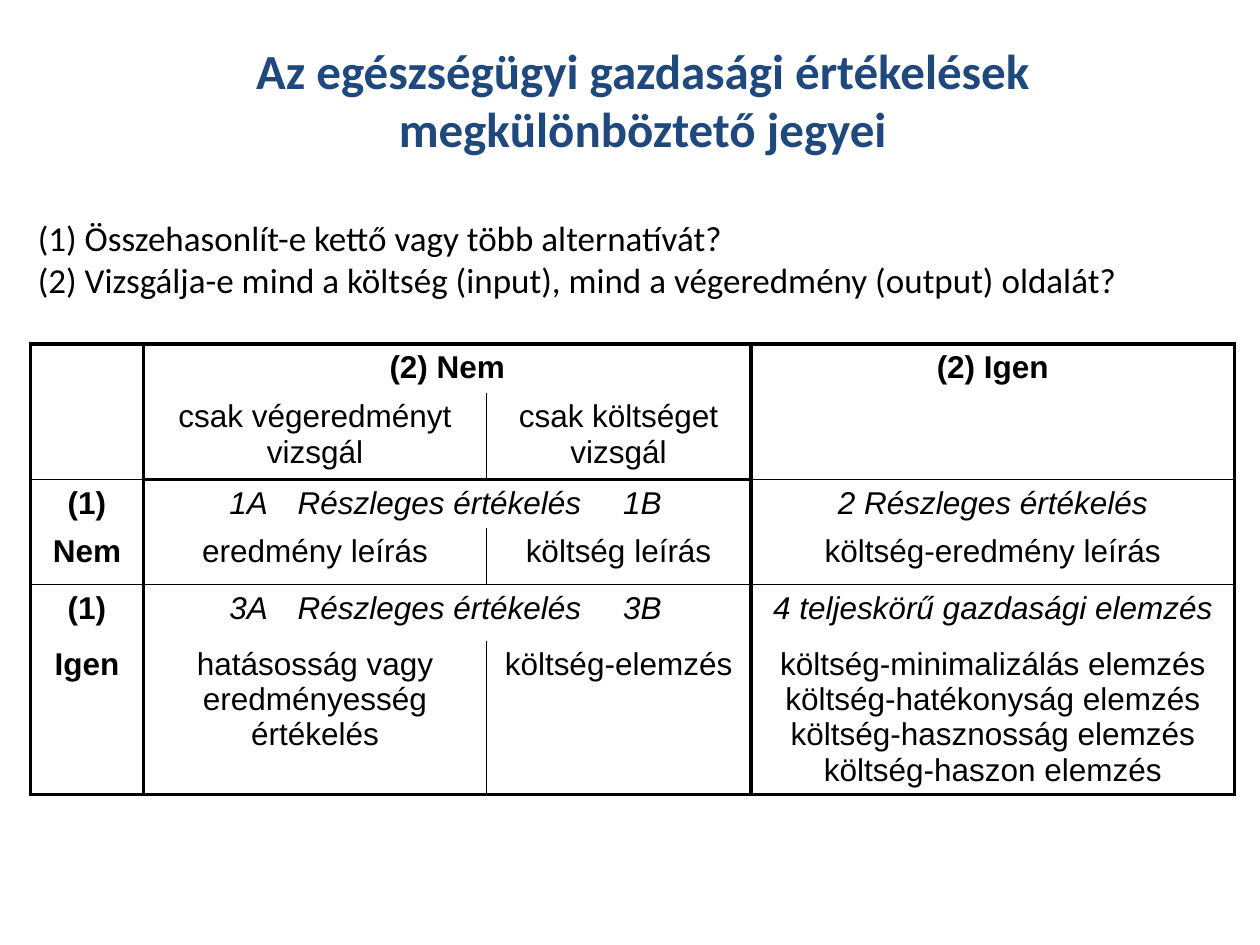
from dataclasses import dataclass
from lxml.etree import SubElement
from pptx import Presentation
from pptx.dml.color import RGBColor
from pptx.enum.text import MSO_ANCHOR as Anchor, MSO_AUTO_SIZE as AutoSize, PP_ALIGN as Align
from pptx.oxml.ns import qn
from pptx.util import Pt


@dataclass(frozen=True)
class Theme:
    heading_font: str = "Calibri"
    table_font: str = "Arial"
    heading_color: str = "1F497D"
    ink: str = "000000"
    title_size: int = 28
    question_size: int = 20
    table_size: int = 18
    thick: float = 2.25
    thin: float = 1


THEME = Theme()

TITLE = "Az egészségügyi gazdasági értékelések megkülönböztető jegyei"
QUESTIONS = [
    "(1) Összehasonlít-e kettő vagy több alternatívát?",
    "(2) Vizsgálja-e mind a költség (input), mind a végeredmény (output) oldalát?",
]
ROWS = [
    ["", "(2) Nem", None, "(2) Igen"],
    ["", "csak végeredményt vizsgál", "csak költséget vizsgál", ""],
    ["(1)", "1A\tRészleges értékelés\t1B", None, "2 Részleges értékelés"],
    ["Nem", "eredmény leírás", "költség leírás", "költség-eredmény leírás"],
    ["(1)", "3A\tRészleges értékelés\t3B", None, "4 teljeskörű gazdasági elemzés"],
    ["Igen", "hatásosság vagy eredményesség értékelés", "költség-elemzés",
     "költség-minimalizálás elemzés\nköltség-hatékonyság elemzés\n"
     "költség-hasznosság elemzés\nköltség-haszon elemzés"],
]

TITLE_BOX = (40.3, 13, 653.8, 87.1)
QUESTION_BOX = (14.4, 120.2, 686.2, 55.4)
TABLE_ORIGIN = (17.3, 196.6)
COLUMN_WIDTHS = [64.8, 195.8, 151.2, 276.5]
ROW_HEIGHTS = [28, 49.5, 27.5, 32.5, 32, 87.5]
SPLIT_MARGIN = 49
SPLIT_TABS = [39, 225]

THICK, THIN = THEME.thick, THEME.thin
COLUMN_EDGES = [THICK, THICK, THIN, THICK, THICK]
ROW_EDGES = {0: [THICK] * 4, 2: [THIN, THICK, THICK, THIN], 4: [THIN] * 4, 6: [THICK] * 4}
NO_EDGES = [0] * 4


def place(shape, box):
    shape.left, shape.top, shape.width, shape.height = map(Pt, box)


def style(paragraph, font_name, size, color, bold=False, italic=False):
    font = paragraph.font
    font.name, font.size, font.bold, font.italic = font_name, Pt(size), bold, italic
    font.color.rgb = RGBColor.from_string(color)


def draw_edge(cell, side, width):
    line = SubElement(cell._tc.get_or_add_tcPr(), qn(f"a:{side}"), w=str(Pt(width)))
    if width:
        fill = SubElement(line, qn("a:solidFill"))
        SubElement(fill, qn("a:srgbClr"), val=THEME.ink)
    else:
        SubElement(line, qn("a:noFill"))


def set_tabs(paragraph):
    tabs = SubElement(paragraph._p.get_or_add_pPr(), qn("a:tabLst"))
    for stop in SPLIT_TABS:
        SubElement(tabs, qn("a:tab"), pos=str(Pt(stop)), algn="l")


def add_title(slide):
    title = slide.shapes.title
    place(title, TITLE_BOX)
    frame = title.text_frame
    frame.text = TITLE
    frame.vertical_anchor = Anchor.MIDDLE
    frame.auto_size = AutoSize.NONE
    frame.paragraphs[0].alignment = Align.CENTER
    style(frame.paragraphs[0], THEME.heading_font, THEME.title_size, THEME.heading_color, bold=True)


def add_questions(slide):
    questions = slide.placeholders[1]
    place(questions, QUESTION_BOX)
    frame = questions.text_frame
    frame.text = "\n".join(QUESTIONS)
    frame.vertical_anchor = Anchor.MIDDLE
    frame.auto_size = AutoSize.NONE
    for question in frame.paragraphs:
        question.space_before = Pt(0)
        properties = question._p.get_or_add_pPr()
        properties.set("marL", "0")
        properties.set("indent", "0")
        SubElement(properties, qn("a:buNone"))
        style(question, THEME.heading_font, THEME.question_size, THEME.ink)


def fill_cell(cell, text, row, column):
    cell.text = text
    split = "\t" in text
    if split:
        cell.margin_left = Pt(SPLIT_MARGIN)
    for paragraph in cell.text_frame.paragraphs:
        paragraph.alignment = Align.LEFT if split else Align.CENTER
        if split:
            set_tabs(paragraph)
        style(paragraph, THEME.table_font, THEME.table_size, THEME.ink,
              bold=row == 0 or column == 0,
              italic=row in (2, 4) and column > 0)


def add_matrix(slide):
    frame = slide.shapes.add_table(len(ROWS), len(COLUMN_WIDTHS), *map(Pt, TABLE_ORIGIN),
                                   Pt(sum(COLUMN_WIDTHS)), Pt(sum(ROW_HEIGHTS)))
    matrix = frame.table
    matrix.first_row = matrix.horz_banding = False
    for column, width in zip(matrix.columns, COLUMN_WIDTHS):
        column.width = Pt(width)
    for row, height in zip(matrix.rows, ROW_HEIGHTS):
        row.height = Pt(height)

    for r, texts in enumerate(ROWS):
        for c, text in enumerate(texts):
            cell = matrix.cell(r, c)
            joined_left = text is None
            joined_right = c + 1 < len(texts) and texts[c + 1] is None
            if joined_right:
                cell.merge(matrix.cell(r, c + 1))
            if not joined_left:
                fill_cell(cell, text, r, c)
            draw_edge(cell, "lnL", 0 if joined_left else COLUMN_EDGES[c])
            draw_edge(cell, "lnR", COLUMN_EDGES[c + 1 + joined_right])
            draw_edge(cell, "lnT", ROW_EDGES.get(r, NO_EDGES)[c])
            draw_edge(cell, "lnB", ROW_EDGES.get(r + 1, NO_EDGES)[c])
            cell.fill.background()


def main():
    deck = Presentation()
    deck.slide_width, deck.slide_height = Pt(720), Pt(540)
    slide = deck.slides.add_slide(deck.slide_layouts[1])
    add_title(slide)
    add_questions(slide)
    add_matrix(slide)
    deck.save("out.pptx")


if __name__ == "__main__":
    main()
